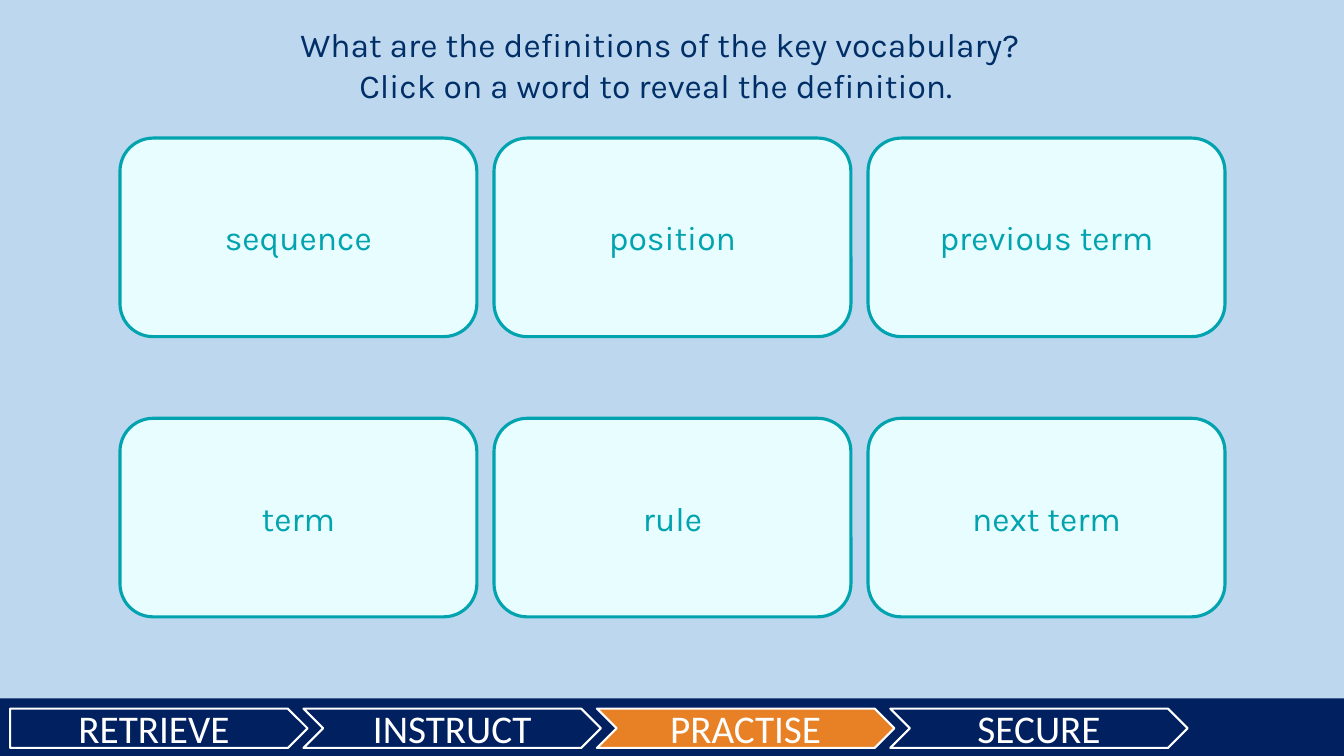
"""Build a vocabulary slide with six word cards and a lesson progress bar."""
import pptx
import pptx.util
import pptx.dml.color
import pptx.enum.shapes
import pptx.enum.text

Inches = pptx.util.Inches
Pt = pptx.util.Pt
SHAPE = pptx.enum.shapes.MSO_SHAPE
ANCHOR = pptx.enum.text.MSO_ANCHOR
CENTER = pptx.enum.text.PP_ALIGN.CENTER

NAVY = "002060"
WHITE = "FFFFFF"
TEAL = "00A3AE"
QUESTION = [
    "What are the definitions of the key vocabulary?",
    "Click on a word to reveal the definition. ",
]
WORDS = [["sequence", "position", "previous term"], ["term", "rule", "next term"]]
STAGES = ["RETRIEVE", "INSTRUCT", "PRACTISE", "SECURE"]


def rgb(value):
    """Return the colour for a hex string."""
    return pptx.dml.color.RGBColor.from_string(value)


def write(tf, lines, font, size, color, anchor):
    """Fill a text frame with centred lines in one font."""
    tf.text = "\n".join(lines)
    tf.vertical_anchor = anchor
    for p in tf.paragraphs:
        p.alignment = CENTER
        for r in p.runs:
            r.font.name = font
            r.font.size = Pt(size)
            r.font.color.rgb = rgb(color)


def add_box(s, kind, left, top, width, height, fill, line=None, weight=0):
    """Add a flat preset shape and return it."""
    sp = s.shapes.add_shape(
        kind, Inches(left), Inches(top), Inches(width), Inches(height))
    sp.shadow.inherit = False
    sp.fill.solid()
    sp.fill.fore_color.rgb = rgb(fill)
    if line:
        sp.line.color.rgb = rgb(line)
        sp.line.width = Pt(weight)
    else:
        sp.line.fill.background()
    return sp


def add_question(s, left, top, width, height):
    """Place the question in the title placeholder."""
    sp = s.shapes.title
    sp.left, sp.top = Inches(left), Inches(top)
    sp.width, sp.height = Inches(width), Inches(height)
    write(sp.text_frame, QUESTION, "Karla", 24, "002E67", ANCHOR.TOP)


def add_cards(s, left, top, width, height):
    """Lay out the word cards as a grid filling the box."""
    card_w, card_h = 3.54, 1.97
    step_x = (width - card_w) / (len(WORDS[0]) - 1)
    step_y = (height - card_h) / (len(WORDS) - 1)
    for row, words in enumerate(WORDS):
        for col, word in enumerate(words):
            sp = add_box(s, SHAPE.ROUNDED_RECTANGLE, left + col * step_x,
                         top + row * step_y, card_w, card_h, "E7FDFF", TEAL, 2.25)
            write(sp.text_frame, [word], "Karla", 24, TEAL, ANCHOR.MIDDLE)
            sp.text_frame.word_wrap = False


def add_progress_bar(s, left, top, width, height, current):
    """Draw the lesson stages on a bar, with the current one highlighted."""
    add_box(s, SHAPE.RECTANGLE, left, top, width, height, NAVY)
    for i, stage in enumerate(STAGES):
        kind = SHAPE.CHEVRON if i else SHAPE.PENTAGON
        fill = "E88126" if stage == current else NAVY
        sp = add_box(s, kind, left + 0.1 + i * 2.91, top + 0.1, 2.95, 0.39,
                     fill, WHITE, 1.5)
        write(sp.text_frame, [stage], "Calibri", 28, WHITE, ANCHOR.MIDDLE)


def main():
    """Build and save the presentation."""
    prs = pptx.Presentation()
    prs.slide_width, prs.slide_height = Inches(13.33), Inches(7.5)
    s = prs.slides.add_slide(prs.slide_layouts[5])
    s.background.fill.solid()
    s.background.fill.fore_color.rgb = rgb("BDD7EE")
    add_progress_bar(s, 0, 6.93, 13.33, 0.57, "PRACTISE")
    add_cards(s, 1.19, 1.37, 10.96, 4.75)
    add_question(s, 0.61, 0.19, 11.87, 0.91)
    prs.save("out.pptx")


if __name__ == "__main__":
    main()
